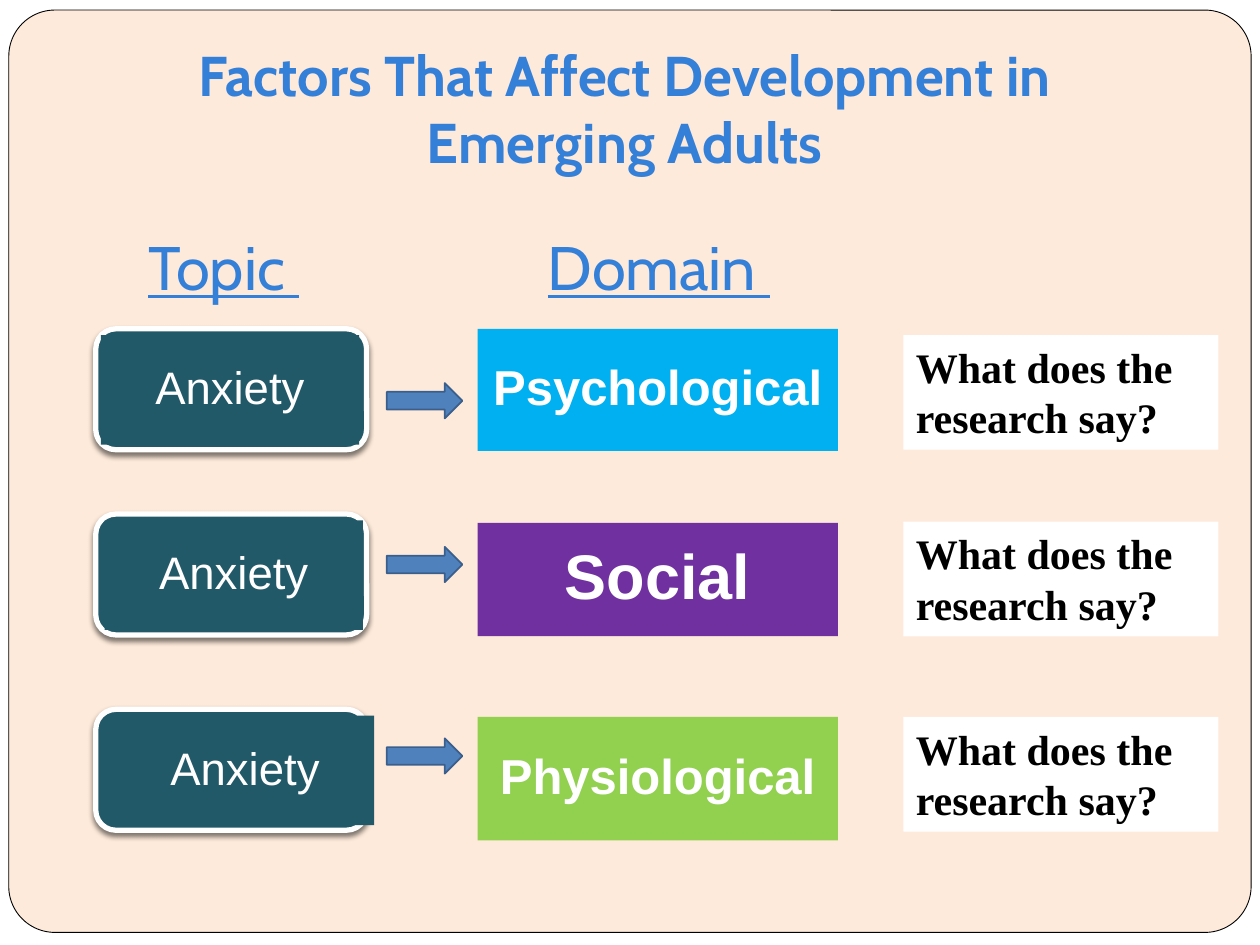
"""Build the slide on factors that affect development in emerging adults."""
from lxml import etree
from pptx import Presentation
from pptx import util as u
from pptx.dml.color import RGBColor
from pptx.enum import shapes, text
from pptx.oxml.ns import qn

WHITE = RGBColor(0xFF, 0xFF, 0xFF)
BLACK = RGBColor(0x00, 0x00, 0x00)
PEACH = RGBColor(0xFD, 0xEA, 0xDA)
HEADING = RGBColor(0x34, 0x7F, 0xD8)
TEAL = RGBColor(0x21, 0x59, 0x68)
ARROW = RGBColor(0x4F, 0x81, 0xBD)
ARROW_EDGE = RGBColor(0x3A, 0x5F, 0x8C)
SKY = RGBColor(0x00, 0xB0, 0xF0)
PURPLE = RGBColor(0x70, 0x30, 0xA0)
GREEN = RGBColor(0x92, 0xD0, 0x50)

TOPIC_X, ARROW_X, DOMAIN_X, QUESTION_X = 0.76, 3.07, 3.79, 7.17
ROW_TOP, ROW_PITCH = 2.61, 1.54
SHAPE = shapes.MSO_SHAPE
CENTER, LEFT = text.PP_ALIGN.CENTER, text.PP_ALIGN.LEFT
MIDDLE, TOP, BOTTOM = text.MSO_ANCHOR.MIDDLE, text.MSO_ANCHOR.TOP, text.MSO_ANCHOR.BOTTOM

prs = Presentation()
prs.slide_width, prs.slide_height = u.Inches(10), u.Inches(7.5)
s = prs.slides.add_slide(prs.slide_layouts[5])
s.background.fill.solid()
s.background.fill.fore_color.rgb = PEACH


def add_box(kind, x, y, w, h, fill, edge=None, weight=0):
    sp = s.shapes.add_shape(kind, *map(u.Inches, (x, y, w, h)))
    sp.shadow.inherit = False
    sp.fill.solid()
    sp.fill.fore_color.rgb = fill
    if edge is None:
        sp.line.fill.background()
    else:
        sp.line.color.rgb = edge
        sp.line.width = u.Pt(weight)
    return sp


def write(sp, lines, font, size, color, align, anchor, insets, bold=False,
          underline=False, spacing=1.0, after=0):
    tf = sp.text_frame
    tf.word_wrap = True
    tf.auto_size = text.MSO_AUTO_SIZE.NONE
    tf.vertical_anchor = anchor
    tf.margin_left, tf.margin_top, tf.margin_right, tf.margin_bottom = map(u.Inches, insets)
    p = tf.paragraphs[0]
    p.alignment, p.line_spacing = align, spacing
    p.space_before, p.space_after = u.Pt(0), u.Pt(round(size * after))
    for i, line in enumerate(lines):
        if i:
            p.add_line_break()
        r = p.add_run()
        r.text = line
        r.font.name, r.font.size, r.font.color.rgb = font, u.Pt(size), color
        r.font.bold, r.font.underline = bold, underline


add_box(SHAPE.RECTANGLE, 0, 0, 10, 7.5, WHITE)
frame = add_box(SHAPE.ROUNDED_RECTANGLE, 0.07, 0.08, 9.86, 7.32, PEACH, BLACK, 0.5)
frame.adjustments[0] = 0.05

rows = [
    ("Psychological", 28, SKY, 0.97, 2.61, 0.04, 3.04, 2.66),
    ("Social", 36, PURPLE, 0.9, 4.08, 0.07, 4.34, 4.14),
    ("Physiological", 28, GREEN, 0.98, 5.63, 0.16, 5.86, 5.69),
]
for i, (domain, size, color, height, topic_y, shift, arrow_y, question_y) in enumerate(rows):
    sp = add_box(SHAPE.RECTANGLE, DOMAIN_X, ROW_TOP + i * ROW_PITCH, 2.86, height, color)
    write(sp, [domain], "Arial", size, WHITE, CENTER, MIDDLE, (0.06, 0.03, 0.06, 0.03),
          bold=True, spacing=0.9, after=0.15)

    card = add_box(SHAPE.ROUNDED_RECTANGLE, TOPIC_X, topic_y, 2.15, 0.96, TEAL, WHITE, 3)
    effects = card.element.spPr.find(qn("a:effectLst"))
    shadow = etree.SubElement(effects, qn("a:outerShdw"), blurRad=str(u.Pt(3)),
                              dist=str(u.Pt(2)), dir="5400000", rotWithShape="0")
    tint = etree.SubElement(shadow, qn("a:srgbClr"), val=str(BLACK))
    etree.SubElement(tint, qn("a:alpha"), val="50000")
    sp = add_box(SHAPE.RECTANGLE, TOPIC_X + shift, topic_y + 0.05, 2.05, 0.87, TEAL)
    write(sp, ["Anxiety"], "Arial", 26, WHITE, CENTER, MIDDLE, (0.11, 0.05, 0.11, 0.05),
          spacing=0.9, after=0.35)

    add_box(SHAPE.RIGHT_ARROW, ARROW_X, arrow_y, 0.6, 0.28, ARROW, ARROW_EDGE, 1)
    sp = add_box(SHAPE.RECTANGLE, QUESTION_X, question_y, 2.5, 0.91, WHITE)
    write(sp, ["What does the research say?"], "Times New Roman", 24, BLACK, LEFT, TOP,
          (0.1, 0.05, 0.1, 0.05), bold=True)

for label, x in (("Topic ", 1.08), ("Domain ", 4.25)):
    sp = s.shapes.add_textbox(*map(u.Inches, (x, 1.25, 2, 1.25)))
    write(sp, [label], "Cabin", 35.1, HEADING, LEFT, BOTTOM, (0.1, 0.05, 0.1, 0.1),
          underline=True)

title = s.shapes.title
title.left, title.top, title.width, title.height = map(u.Inches, (0.71, 0.24, 8.5, 1.25))
write(title, ["Factors That Affect Development in", "Emerging Adults"], "Cabin", 32, HEADING,
      CENTER, BOTTOM, (0.1, 0.05, 0.1, 0.1), bold=True)
title.element.getparent().append(title.element)

prs.save("out.pptx")
